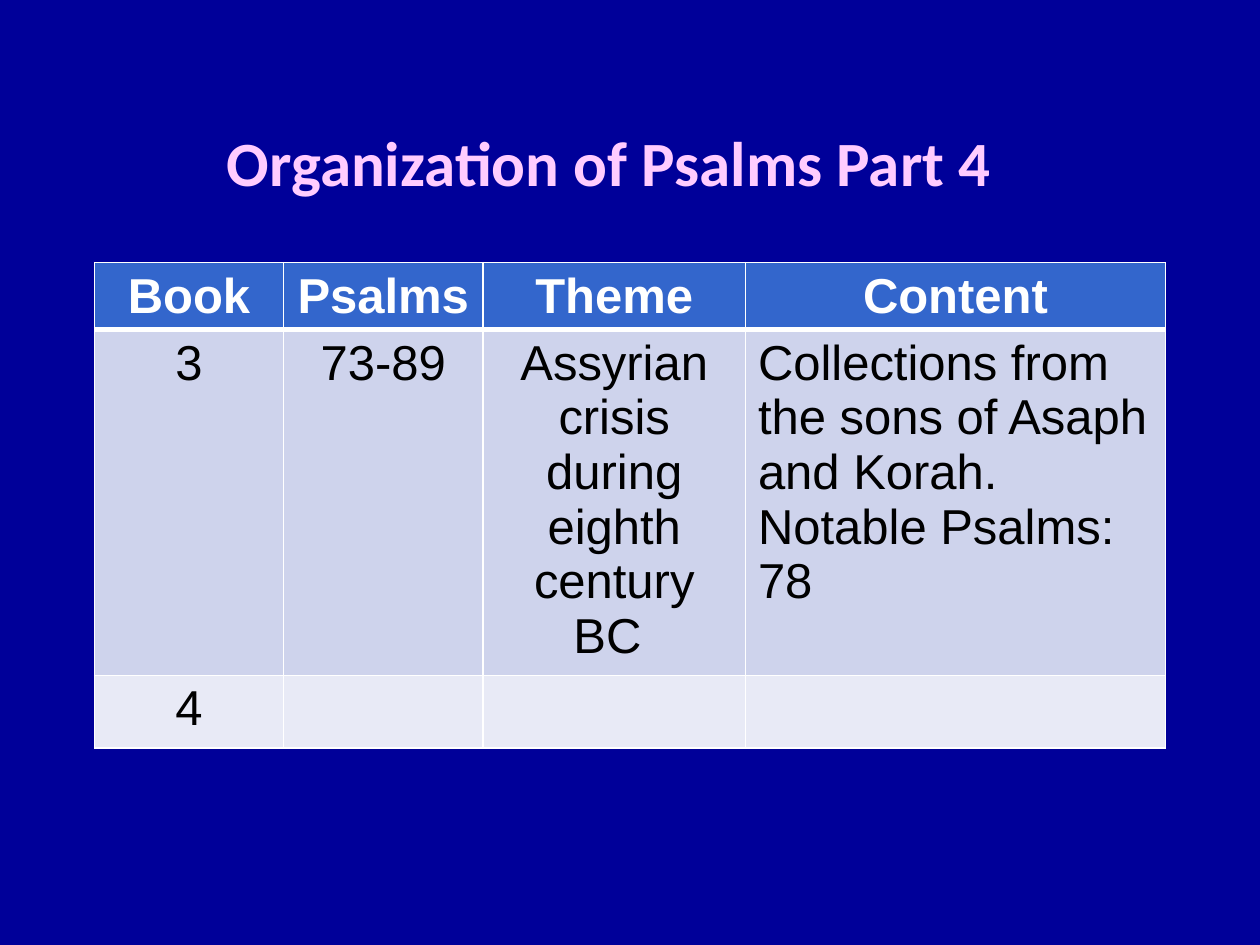
"""Build the slide on how the Psalms are organized, part 4."""
from dataclasses import dataclass

import pptx
import pptx.dml.color
import pptx.enum.text
import pptx.oxml
import pptx.oxml.ns
import pptx.util

Pt = pptx.util.Pt
Color = pptx.dml.color.RGBColor
Align = pptx.enum.text.PP_ALIGN
Anchor = pptx.enum.text.MSO_ANCHOR

NAVY = Color(0x00, 0x00, 0x99)
PINK = Color(0xFF, 0xCC, 0xFF)
BLUE = Color(0x33, 0x66, 0xCC)
PALE = Color(0xCE, 0xD3, 0xEC)
MIST = Color(0xE8, 0xEA, 0xF6)
WHITE = Color(0xFF, 0xFF, 0xFF)
BLACK = Color(0x00, 0x00, 0x00)

WIDTHS = (108, 114, 150, 240)
THIN, THICK = 1, 3


@dataclass(frozen=True)
class Row:
    """One table row and its look."""
    texts: tuple[str, ...]
    height: float
    fill: Color
    ink: Color = BLACK
    bold: bool = False
    top: int = THIN
    bottom: int = THIN
    last: Align = Align.LEFT


ROWS = (
    Row(("Book", "Psalms", "Theme", "Content"), 38, BLUE, WHITE, True,
        bottom=THICK, last=Align.CENTER),
    Row(("3", "73-89", "Assyrian crisis during eighth century BC ",
         "Collections from the sons of Asaph and Korah.  Notable Psalms: 78"),
        197.5, PALE, top=THICK),
    Row(("4", "", "", ""), 41.5, MIST),
)


def style(para, align: Align, ink: Color, **form) -> None:
    """Set the alignment, colour and font values of a paragraph."""
    para.alignment = align
    font = para.runs[0].font if para.runs else para.font
    font.color.rgb = ink
    for key, value in form.items():
        setattr(font, key, value)


def edge(cell, side: str, width: int) -> None:
    """Draw one white border of a cell."""
    space = pptx.oxml.ns.nsdecls("a")
    line = pptx.oxml.parse_xml(
        f'<a:{side} {space} w="{Pt(width)}"><a:solidFill>'
        f'<a:srgbClr val="{WHITE}"/></a:solidFill></a:{side}>')
    cell._tc.get_or_add_tcPr().append(line)


def fill_row(table, index: int, row: Row) -> None:
    """Write and format one table row."""
    table.rows[index].height = Pt(row.height)
    for col, text in enumerate(row.texts):
        cell = table.cell(index, col)
        cell.text = text
        align = row.last if col == len(WIDTHS) - 1 else Align.CENTER
        style(cell.text_frame.paragraphs[0], align, row.ink,
              name="Arial", size=Pt(28), bold=row.bold)
        sides = {"lnL": THIN, "lnR": THIN, "lnT": row.top, "lnB": row.bottom}
        for side, width in sides.items():
            edge(cell, side, width)
        cell.fill.solid()
        cell.fill.fore_color.rgb = row.fill


def add_title(slide, text: str) -> None:
    """Place and format the title."""
    title = slide.shapes.title
    place = {"left": 42, "top": 48, "width": 612, "height": 88}
    for key, value in place.items():
        setattr(title, key, Pt(value))
    title.text_frame.text = text
    title.text_frame.vertical_anchor = Anchor.MIDDLE
    style(title.text_frame.paragraphs[0], Align.CENTER, PINK,
          name="Calibri", size=Pt(36), bold=True)


def add_grid(slide) -> None:
    """Add the table of books."""
    high = sum(row.height for row in ROWS)
    table = slide.shapes.add_table(
        len(ROWS), len(WIDTHS), Pt(54), Pt(150),
        Pt(sum(WIDTHS)), Pt(high)).table
    for col, width in zip(table.columns, WIDTHS):
        col.width = Pt(width)
    for index, row in enumerate(ROWS):
        fill_row(table, index, row)


def main() -> None:
    """Build and save the deck."""
    deck = pptx.Presentation()
    deck.slide_width, deck.slide_height = Pt(720), Pt(540)
    slide = deck.slides.add_slide(deck.slide_layouts[5])
    slide.background.fill.solid()
    slide.background.fill.fore_color.rgb = NAVY
    add_title(slide, "Organization of Psalms Part 4")
    add_grid(slide)
    deck.save("out.pptx")


if __name__ == "__main__":
    main()
